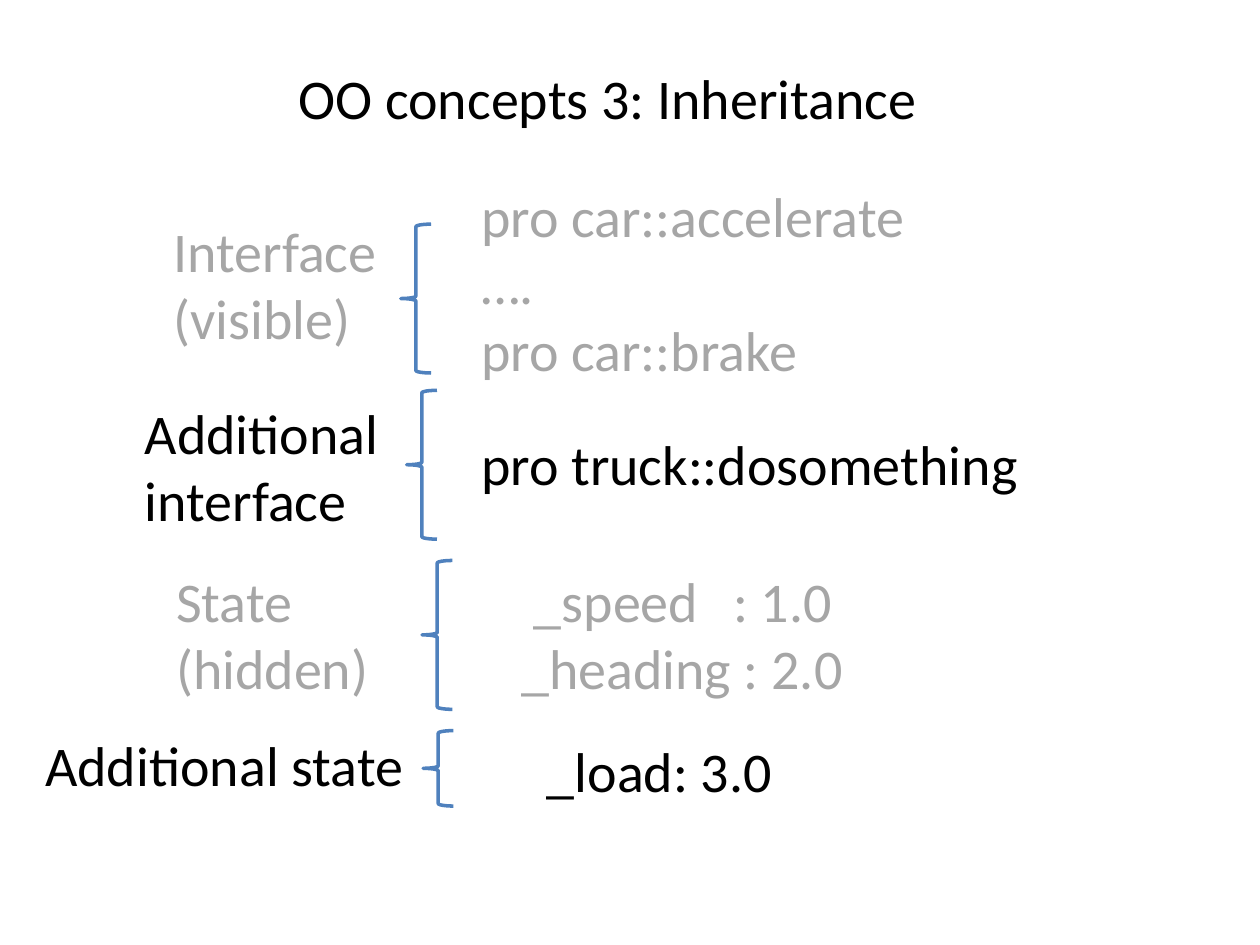
import dataclasses

import lxml.etree
import pptx
import pptx.dml.color
import pptx.enum.shapes
import pptx.enum.text
import pptx.oxml.ns
import pptx.slide
import pptx.util

Cm = pptx.util.Cm
HUES = {"dark": "000000", "faded": "A6A6A6", "brace": "4F81BD"}
FONT = "Calibri"
SIZE = 32
STOP = 4.27


@dataclasses.dataclass
class Label:
    left: float
    top: float
    width: float
    height: float
    lines: list[str]
    hue: str = "dark"
    wrap: bool = False


@dataclasses.dataclass
class Brace:
    left: float
    top: float
    height: float = 3.0
    width: float = 0.61


TITLE = Label(0.38, 0.36, 23.75, 3.18, ["OO concepts 3: Inheritance"], wrap=True)

LABELS = [
    Label(3.25, 4.24, 4.7, 3.0, ["Interface", "(visible)"], "faded"),
    Label(9.45, 3.53, 9.19, 4.37,
          ["pro car::accelerate", "….", "pro car::brake"], "faded"),
    Label(2.67, 7.9, 5.28, 3.0, ["Additional", "interface"]),
    Label(9.45, 8.53, 11.46, 1.63, ["pro truck::dosomething"]),
    Label(3.3, 11.3, 4.42, 3.0, ["State", "(hidden)"], "faded"),
    Label(10.26, 11.3, 7.19, 3.0, [" _speed\t: 1.0", "_heading : 2.0"], "faded"),
    Label(0.66, 14.6, 7.85, 1.63, ["Additional state"]),
    Label(10.52, 14.73, 5.97, 1.63, [" _load: 3.0"], wrap=True),
]

BRACES = [
    Brace(8.08, 4.52),
    Brace(8.2, 7.87),
    Brace(8.51, 11.3),
    Brace(8.53, 14.73, 1.52),
]


def tint(name: str) -> pptx.dml.color.RGBColor:
    return pptx.dml.color.RGBColor.from_string(HUES[name])


def add_stop(para, place: float) -> None:
    qn = pptx.oxml.ns.qn
    tabs = lxml.etree.SubElement(para._p.get_or_add_pPr(), qn("a:tabLst"))
    lxml.etree.SubElement(tabs, qn("a:tab"), pos=str(int(Cm(place))), algn="l")


def add_label(slide: pptx.slide.Slide, label: Label):
    box = slide.shapes.add_textbox(
        Cm(label.left), Cm(label.top), Cm(label.width), Cm(label.height))
    frame = box.text_frame
    frame.word_wrap = label.wrap
    frame.auto_size = pptx.enum.text.MSO_AUTO_SIZE.SHAPE_TO_FIT_TEXT
    for index, line in enumerate(label.lines):
        para = frame.add_paragraph() if index else frame.paragraphs[0]
        if "\t" in line:
            add_stop(para, STOP)
        run = para.add_run()
        run.text = line
        run.font.name = FONT
        run.font.size = pptx.util.Pt(SIZE)
        run.font.color.rgb = tint(label.hue)
    return frame


def add_title(slide: pptx.slide.Slide, label: Label) -> None:
    frame = add_label(slide, label)
    frame.auto_size = pptx.enum.text.MSO_AUTO_SIZE.NONE
    frame.vertical_anchor = pptx.enum.text.MSO_ANCHOR.MIDDLE
    frame.paragraphs[0].alignment = pptx.enum.text.PP_ALIGN.CENTER


def add_brace(slide: pptx.slide.Slide, brace: Brace) -> None:
    shape = slide.shapes.add_shape(
        pptx.enum.shapes.MSO_SHAPE.LEFT_BRACE,
        Cm(brace.left), Cm(brace.top), Cm(brace.width), Cm(brace.height))
    shape.shadow.inherit = False
    shape.fill.background()
    shape.line.color.rgb = tint("brace")
    shape.line.width = pptx.util.Pt(2)


def main() -> None:
    deck = pptx.Presentation()
    deck.slide_width = Cm(25.4)
    deck.slide_height = Cm(19.05)
    slide = deck.slides.add_slide(deck.slide_layouts[6])
    add_title(slide, TITLE)
    for label in LABELS:
        add_label(slide, label)
    for brace in BRACES:
        add_brace(slide, brace)
    deck.save("out.pptx")


if __name__ == "__main__":
    main()
